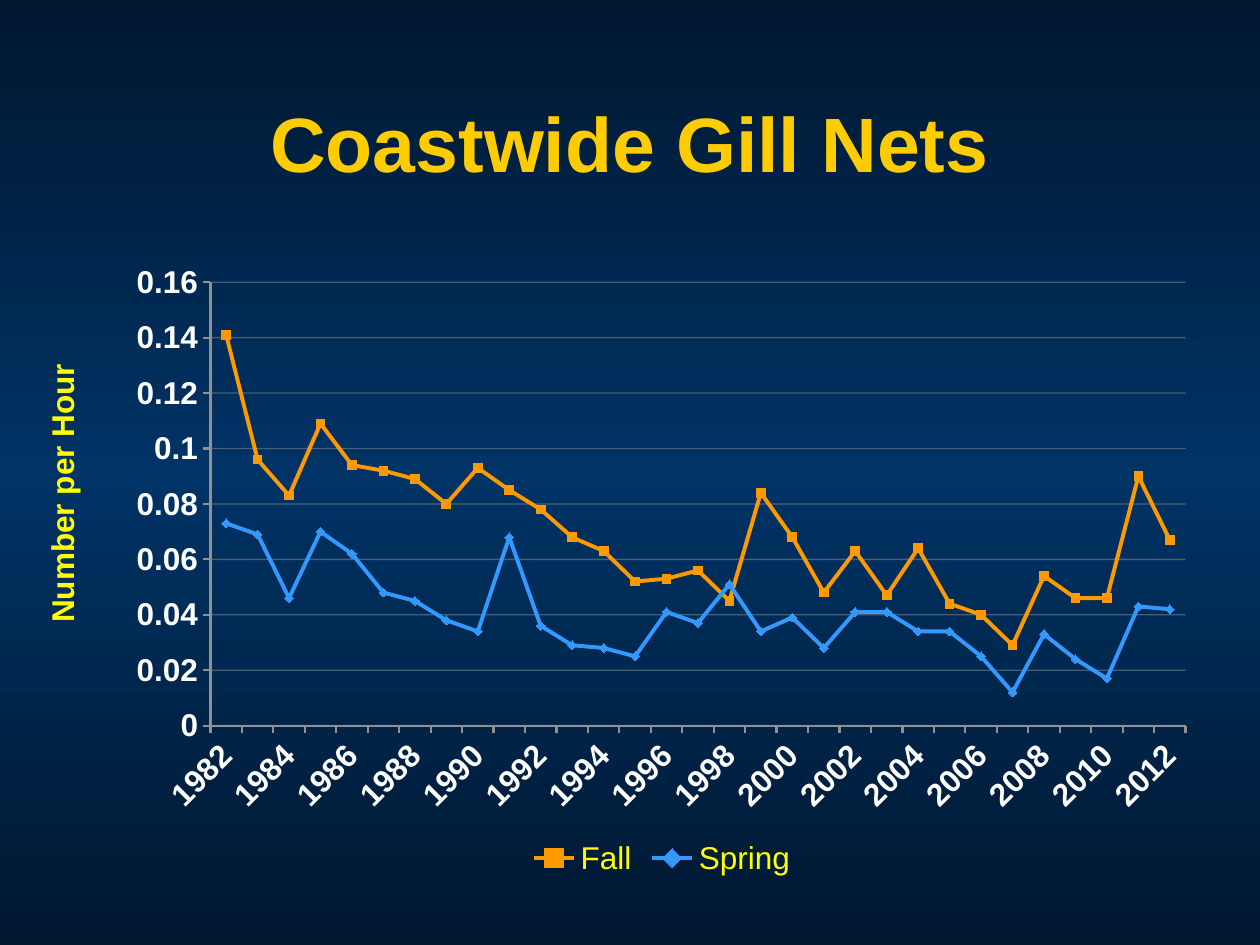
"""Build a slide with a line chart of coastwide gill net catches by season."""
from copy import deepcopy

from lxml.etree import SubElement
from pptx import Presentation
from pptx.chart.data import CategoryChartData
from pptx.dml.color import RGBColor
from pptx.enum.chart import XL_CHART_TYPE as ChartType
from pptx.enum.chart import XL_LEGEND_POSITION as LegendPosition
from pptx.enum.chart import XL_MARKER_STYLE as Marker
from pptx.enum.chart import XL_TICK_MARK as TickMark
from pptx.enum.text import MSO_ANCHOR as Anchor
from pptx.enum.text import PP_ALIGN as Align
from pptx.oxml.ns import qn
from pptx.util import Inches, Pt

NAVY = RGBColor(0x00, 0x17, 0x2F)
BLUE = RGBColor(0x00, 0x33, 0x66)
GOLD = RGBColor(0xFF, 0xCC, 0x00)
YELLOW = RGBColor(0xFF, 0xFF, 0x00)
WHITE = RGBColor(0xFF, 0xFF, 0xFF)
GRAY = RGBColor(0x91, 0x91, 0x91)
ORANGE = RGBColor(0xFF, 0x99, 0x00)
SKY = RGBColor(0x33, 0x99, 0xFF)
FONT = "Arial"

BACKGROUND = [(0, NAVY), (0.5, BLUE), (1, NAVY)]
TITLE = "Coastwide Gill Nets"
AXIS_LABEL = "Number per Hour"
YEARS = range(1982, 2013)
FALL = [
    0.141, 0.096, 0.083, 0.109, 0.094, 0.092, 0.089, 0.08, 0.093, 0.085, 0.078,
    0.068, 0.063, 0.052, 0.053, 0.056, 0.045, 0.084, 0.068, 0.048, 0.063,
    0.047, 0.064, 0.044, 0.04, 0.029, 0.054, 0.046, 0.046, 0.09, 0.067,
]
SPRING = [
    0.073, 0.069, 0.046, 0.07, 0.062, 0.048, 0.045, 0.038, 0.034, 0.068, 0.036,
    0.029, 0.028, 0.025, 0.041, 0.037, 0.051, 0.034, 0.039, 0.028, 0.041,
    0.041, 0.034, 0.034, 0.025, 0.012, 0.033, 0.024, 0.017, 0.043, 0.042,
]
SEASONS = [
    ("Fall", FALL, ORANGE, Marker.SQUARE),
    ("Spring", SPRING, SKY, Marker.DIAMOND),
]
TITLE_AREA = (0, 0.5, 10, 1.25)
LABEL_AREA = (0.29, 2.58, 0.5, 2.67)
CHART_AREA = (0.92, 2, 8.67, 5)
PLOT_AREA = (1.67, 2.24, 7.74, 3.52)


def style_font(font, size, color, bold):
    font.name, font.size, font.bold = FONT, Pt(size), bold
    font.color.rgb = color


def paint_background(page):
    fill = page.background.fill
    fill.gradient()
    fill.gradient_angle = 270
    stop_list = page.element.find(".//" + qn("a:gsLst"))
    stop_list.append(deepcopy(stop_list[0]))
    for stop, (position, color) in zip(fill.gradient_stops, BACKGROUND):
        stop.position = position
        stop.color.rgb = color


def add_text(page, text, area, size, color, anchor):
    box = page.shapes.add_textbox(*map(Inches, area))
    frame = box.text_frame
    frame.word_wrap = True
    frame.vertical_anchor = anchor
    frame.text = text
    para = frame.paragraphs[0]
    para.alignment = Align.CENTER
    style_font(para.runs[0].font, size, color, True)
    return box


def style_axis(axis):
    axis.major_tick_mark = TickMark.OUTSIDE
    axis.minor_tick_mark = TickMark.NONE
    axis.format.line.color.rgb = GRAY
    axis.format.line.width = Pt(1.25)
    axis.tick_labels.number_format = "General"
    axis.tick_labels.number_format_is_linked = False
    style_font(axis.tick_labels.font, 18, WHITE, True)


def style_value_axis(axis, element):
    style_axis(axis)
    axis.minimum_scale, axis.maximum_scale, axis.major_unit = 0, 0.16, 0.02
    axis.has_major_gridlines = True
    line = axis.major_gridlines.format.line
    line.color.rgb = GRAY
    line.width = Pt(0.75)
    gridlines = element.find(qn("c:majorGridlines"))
    color = gridlines.find(".//" + qn("a:srgbClr"))
    SubElement(color, qn("a:alpha")).set("val", "50000")


def style_year_axis(axis, element):
    style_axis(axis)
    element.find(qn("c:txPr")).find(qn("a:bodyPr")).set("rot", "-2700000")
    last = element.find(qn("c:noMultiLvlLbl"))
    for name, step in (("c:tickLblSkip", "2"), ("c:tickMarkSkip", "1")):
        skip = SubElement(element, qn(name))
        skip.set("val", step)
        last.addprevious(skip)


def place_plot(plot_area):
    layout = plot_area.find(qn("c:layout"))
    if layout is None:
        layout = SubElement(plot_area, qn("c:layout"))
        plot_area.insert(0, layout)
    left, top, width, height = CHART_AREA
    plot_left, plot_top, plot_width, plot_height = PLOT_AREA
    settings = {
        "layoutTarget": "inner", "xMode": "edge", "yMode": "edge",
        "x": (plot_left - left) / width, "y": (plot_top - top) / height,
        "w": plot_width / width, "h": plot_height / height,
    }
    manual = SubElement(layout, qn("c:manualLayout"))
    for name, value in settings.items():
        SubElement(manual, qn("c:" + name)).set("val", str(value))


def add_catch_chart(page):
    data = CategoryChartData()
    data.categories = YEARS
    for name, values, _, _ in SEASONS:
        data.add_series(name, values)
    chart = page.shapes.add_chart(
        ChartType.LINE_MARKERS, *map(Inches, CHART_AREA), data).chart
    chart.has_title = False
    style_font(chart.font, 18, YELLOW, False)
    chart.has_legend = True
    chart.legend.position = LegendPosition.BOTTOM
    chart.legend.include_in_layout = False
    style_font(chart.legend.font, 18, YELLOW, False)

    plot = chart.plots[0]
    plot.vary_by_categories = False
    for series, (_, _, color, marker) in zip(plot.series, SEASONS):
        series.smooth = False
        series.format.line.color.rgb = color
        series.format.line.width = Pt(2.25)
        series.marker.style = marker
        series.marker.size = 5
        series.marker.format.fill.solid()
        series.marker.format.fill.fore_color.rgb = color
        series.marker.format.line.color.rgb = color

    plot_area = chart.element.find(".//" + qn("c:plotArea"))
    style_value_axis(chart.value_axis, plot_area.find(qn("c:valAx")))
    style_year_axis(chart.category_axis, plot_area.find(qn("c:catAx")))
    place_plot(plot_area)


def main():
    deck = Presentation()
    deck.slide_width, deck.slide_height = Inches(10), Inches(7.5)
    page = deck.slides.add_slide(deck.slide_layouts[6])
    paint_background(page)
    add_text(page, TITLE, TITLE_AREA, 44, GOLD, Anchor.MIDDLE)
    add_catch_chart(page)
    label = add_text(page, AXIS_LABEL, LABEL_AREA, 18, YELLOW, Anchor.TOP)
    label.element.find(".//" + qn("a:bodyPr")).set("vert", "vert270")
    deck.save("out.pptx")


if __name__ == "__main__":
    main()
